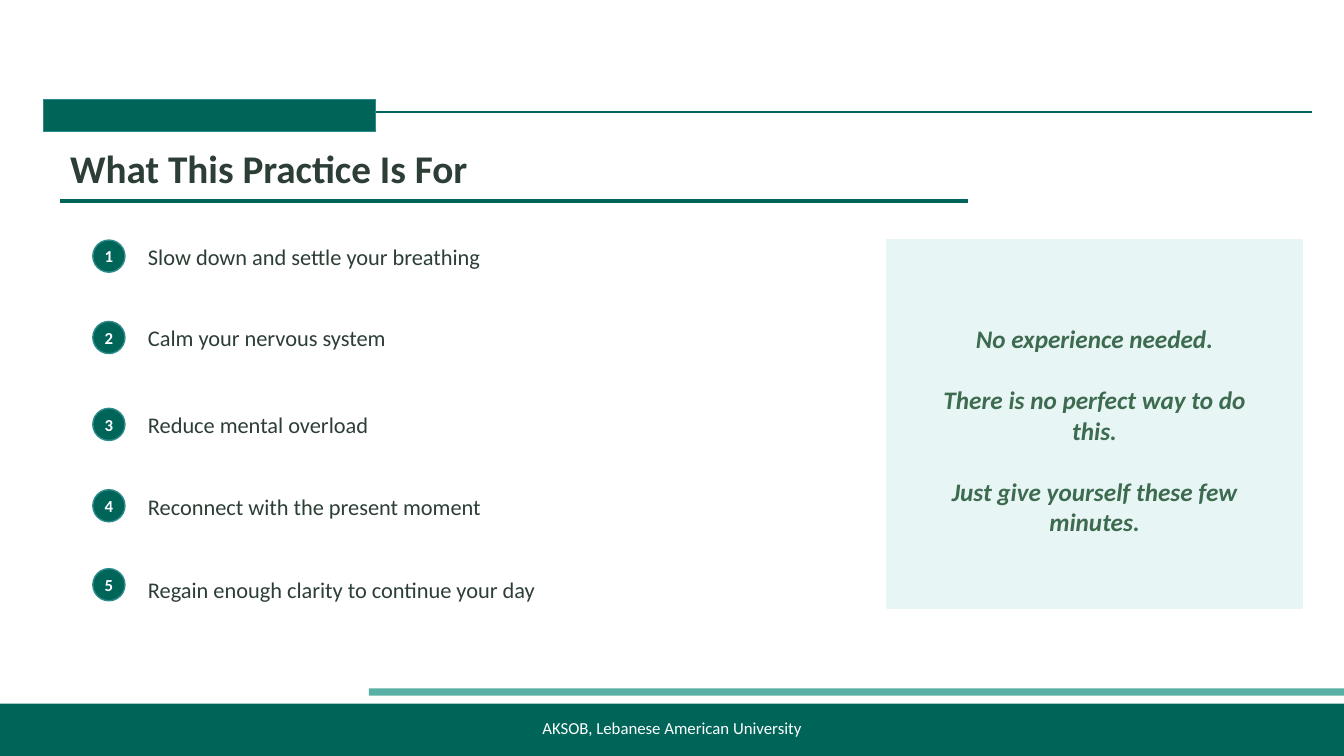
import pptx
import pptx.util
import pptx.dml.color
import pptx.enum.shapes
import pptx.enum.text
import pptx.oxml.ns
from lxml import etree

Cm, Pt = pptx.util.Cm, pptx.util.Pt
Kind = pptx.enum.shapes.MSO_SHAPE
Align = pptx.enum.text.PP_ALIGN
Middle = pptx.enum.text.MSO_ANCHOR.MIDDLE
qn = pptx.oxml.ns.qn

GREEN, TEAL, INK = "006559", "2E8B8B", "2C3E35"
MINT, MOSS, WHITE = "E8F5F5", "3D6B50", "FFFFFF"


def tint(code):
    return pptx.dml.color.RGBColor.from_string(code)


class Page:
    """Holds the text style and the current slide."""

    base = {"name": "Calibri", "size": Pt(16), "bold": False, "italic": False}

    def __init__(self, slide):
        self.slide = slide

    def label(self, shape, lines, hue, align=Align.LEFT, gap=0, inset=None, **style):
        frame = shape.text_frame
        frame.word_wrap = True
        frame.vertical_anchor = Middle
        if inset is not None:
            for side in ("left", "right", "top", "bottom"):
                setattr(frame, "margin_" + side, inset)
        for i, line in enumerate(lines):
            para = frame.add_paragraph() if i else frame.paragraphs[0]
            para.alignment = align
            if i and gap:
                para.space_before = Pt(gap)
            run = para.add_run()
            run.text = line
            for key, value in {**self.base, **style}.items():
                setattr(run.font, key, value)
            run.font.color.rgb = tint(hue)

    def text(self, box, lines, hue, **style):
        shape = self.slide.shapes.add_textbox(*map(Cm, box))
        self.label(shape, lines, hue, **style)

    def shape(self, box, fill, edge=None, kind=Kind.RECTANGLE, alpha=None):
        shape = self.slide.shapes.add_shape(kind, *map(Cm, box))
        shape.shadow.inherit = False
        shape.fill.solid()
        shape.fill.fore_color.rgb = tint(fill)
        if alpha:
            color = shape._element.spPr.find(".//" + qn("a:srgbClr"))
            etree.SubElement(color, qn("a:alpha"), val=str(alpha * 1000))
        if edge:
            shape.line.color.rgb = tint(edge)
            shape.line.width = Pt(1)
        else:
            shape.line.fill.background()
        return shape

    def rule(self, ends, hue, width):
        line = self.slide.shapes.add_connector(
            pptx.enum.shapes.MSO_CONNECTOR.STRAIGHT, *map(Cm, ends))
        line.line.color.rgb = tint(hue)
        line.line.width = Pt(width)
        etree.SubElement(line._element.spPr, qn("a:effectLst"))


def main():
    deck = pptx.Presentation()
    deck.slide_width, deck.slide_height = Cm(33.87), Cm(19.05)
    page = Page(deck.slides.add_slide(deck.slide_layouts[6]))

    # Footer bands and top rule
    page.shape((0, 17.73, 33.87, 1.32), GREEN)
    page.shape((9.3, 17.35, 24.57, 0.18), "158F7E", alpha=71)
    page.rule((1.17, 2.82, 33.07, 2.82), GREEN, 1.5)

    # Title
    page.text((1.52, 3.35, 22.86, 1.78), ["What This Practice Is For"], INK,
              size=Pt(28), bold=True)
    page.shape((1.52, 5.03, 22.86, 0.08), GREEN, GREEN)

    # Numbered aims: badge top, label top, label
    aims = [
        (6.05, 5.92, "Slow down and settle your breathing"),
        (8.1, 7.98, "Calm your nervous system"),
        (10.29, 10.16, "Reduce mental overload"),
        (12.34, 12.24, "Reconnect with the present moment"),
        (14.33, 14.33, "Regain enough clarity to continue your day"),
    ]
    for num, (top, row, aim) in enumerate(aims, 1):
        badge = page.shape((2.34, top, 0.81, 0.81), GREEN, TEAL, Kind.OVAL)
        page.label(badge, [str(num)], WHITE, align=Align.CENTER, inset=0,
                   size=Pt(12), bold=True)
        page.text((3.48, row, 14.22, 1.07), [aim], INK)

    # Footer text
    page.text((5, 17.96, 23.88, 0.76), ["AKSOB, Lebanese American University"],
              WHITE, align=Align.CENTER, size=Pt(12))

    # Side panel
    page.shape((22.35, 6.05, 10.46, 9.27), MINT, MINT)
    page.text((23.24, 8.13, 8.69, 5.41),
              ["No experience needed.",
               "There is no perfect way to do this.",
               "Just give yourself these few minutes."],
              MOSS, align=Align.CENTER, gap=22, size=Pt(18), bold=True, italic=True)

    # Corner tab
    page.shape((1.09, 2.51, 8.38, 0.81), GREEN, TEAL)

    deck.save("out.pptx")


if __name__ == "__main__":
    main()
